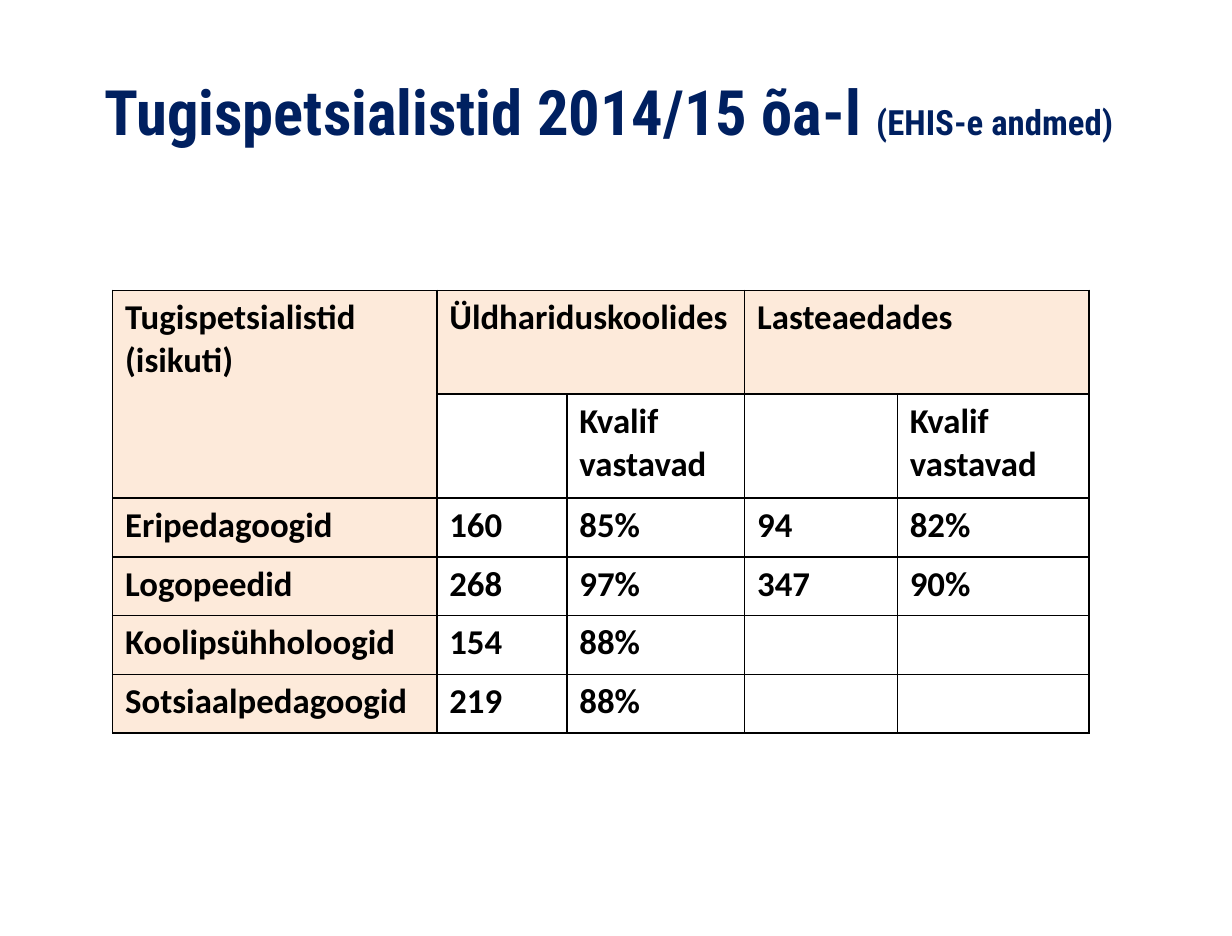
from lxml import etree
from pptx import Presentation
from pptx import util as u
from pptx.dml import color
from pptx.enum import text
from pptx.oxml import ns

NAVY, BLACK, PEACH = "002060", "000000", "FDEADA"
COLUMN_WIDTHS = [2.59, 1.04, 1.42, 1.22, 1.53]
ROW_HEIGHTS = [0.83] * 2 + [0.47] * 4
MERGES = [((0, 0), (1, 0)), ((0, 1), (0, 2)), ((0, 3), (0, 4))]
QUALIFIED = "Kvalif vastavad"
ROWS = [
    ["Tugispetsialistid\n(isikuti)", "Üldhariduskoolides", "", "Lasteaedades", ""],
    ["", "", QUALIFIED, "", QUALIFIED],
    ["Eripedagoogid", "160", "85%", "94", "82%"],
    ["Logopeedid", "268", "97%", "347", "90%"],
    ["Koolipsühholoogid", "154", "88%", "", ""],
    ["Sotsiaalpedagoogid", "219", "88%", "", ""],
]


def rgb(value):
    """Turn a hex string into a colour."""
    return color.RGBColor.from_string(value)


def add_text(paragraph, words, *, size, font, fill, bold=True):
    """Add a formatted run to a paragraph."""
    run = paragraph.add_run()
    run.text = words
    run.font.size = u.Pt(size)
    run.font.name = font
    run.font.bold = bold
    run.font.color.rgb = rgb(fill)


def add_borders(cell, line_color, width):
    """Draw a solid line on all four sides of a cell."""
    properties = cell._tc.get_or_add_tcPr()
    for index, side in enumerate(("lnL", "lnR", "lnT", "lnB")):
        line = etree.Element(ns.qn(f"a:{side}"), w=str(u.Pt(width)))
        solid = etree.SubElement(line, ns.qn("a:solidFill"))
        etree.SubElement(solid, ns.qn("a:srgbClr"), val=line_color)
        properties.insert(index, line)


class SlideBuilder:
    """Hold the style and the current slide."""

    title_font = "Roboto Condensed"
    body_font = "Calibri"

    def __init__(self, presentation):
        """Add a title-only slide."""
        self.slide = presentation.slides.add_slide(presentation.slide_layouts[5])

    def title(self, parts, left, top, width, height):
        """Place the title, made of (words, size) parts."""
        shape = self.slide.shapes.title
        shape.left, shape.top = u.Inches(left), u.Inches(top)
        shape.width, shape.height = u.Inches(width), u.Inches(height)
        frame = shape.text_frame
        frame.word_wrap = True
        frame.auto_size = text.MSO_AUTO_SIZE.NONE
        frame.vertical_anchor = text.MSO_ANCHOR.MIDDLE
        frame.margin_left = frame.margin_right = 0
        frame.margin_top = frame.margin_bottom = 0
        paragraph = frame.paragraphs[0]
        paragraph.alignment = text.PP_ALIGN.CENTER
        paragraph.line_spacing = 0.8
        for words, size in parts:
            add_text(paragraph, words, size=size, font=self.title_font, fill=NAVY)

    def table(self, rows, left, top, widths, heights, merges):
        """Add a bordered table with shaded headings."""
        table = self.slide.shapes.add_table(
            len(rows), len(widths), u.Inches(left), u.Inches(top),
            u.Inches(sum(widths)), u.Inches(sum(heights))).table
        table.first_row = table.horz_banding = False
        for column, width in zip(table.columns, widths):
            column.width = u.Inches(width)
        for row, height in zip(table.rows, heights):
            row.height = u.Inches(height)
        for start, end in merges:
            table.cell(*start).merge(table.cell(*end))
        for row_index, row in enumerate(rows):
            for column_index, words in enumerate(row):
                heading = row_index == 0 or column_index == 0
                self.cell(table.cell(row_index, column_index), words, heading)

    def cell(self, cell, words, heading):
        """Fill, border and write one table cell."""
        if heading:
            cell.fill.solid()
            cell.fill.fore_color.rgb = rgb(PEACH)
        else:
            cell.fill.background()
        add_borders(cell, BLACK, 1)
        frame = cell.text_frame
        for index, line in enumerate(words.splitlines()):
            paragraph = frame.add_paragraph() if index else frame.paragraphs[0]
            add_text(paragraph, line, size=20, font=self.body_font, fill=BLACK)


presentation = Presentation()
# The page is 25 by 19 cm, so the template's 4:3 screen type is dropped.
presentation.slide_width, presentation.slide_height = u.Cm(25), u.Cm(19)
presentation.element.sldSz.attrib.pop("type", None)
builder = SlideBuilder(presentation)
builder.title([("Tugispetsialistid 2014/15 õa-l ", 36), ("(EHIS-e andmed)", 20)],
              0.67, 0.43, 8.39, 1.02)
builder.table(ROWS, 0.9, 2.32, COLUMN_WIDTHS, ROW_HEIGHTS, MERGES)
presentation.save("out.pptx")
